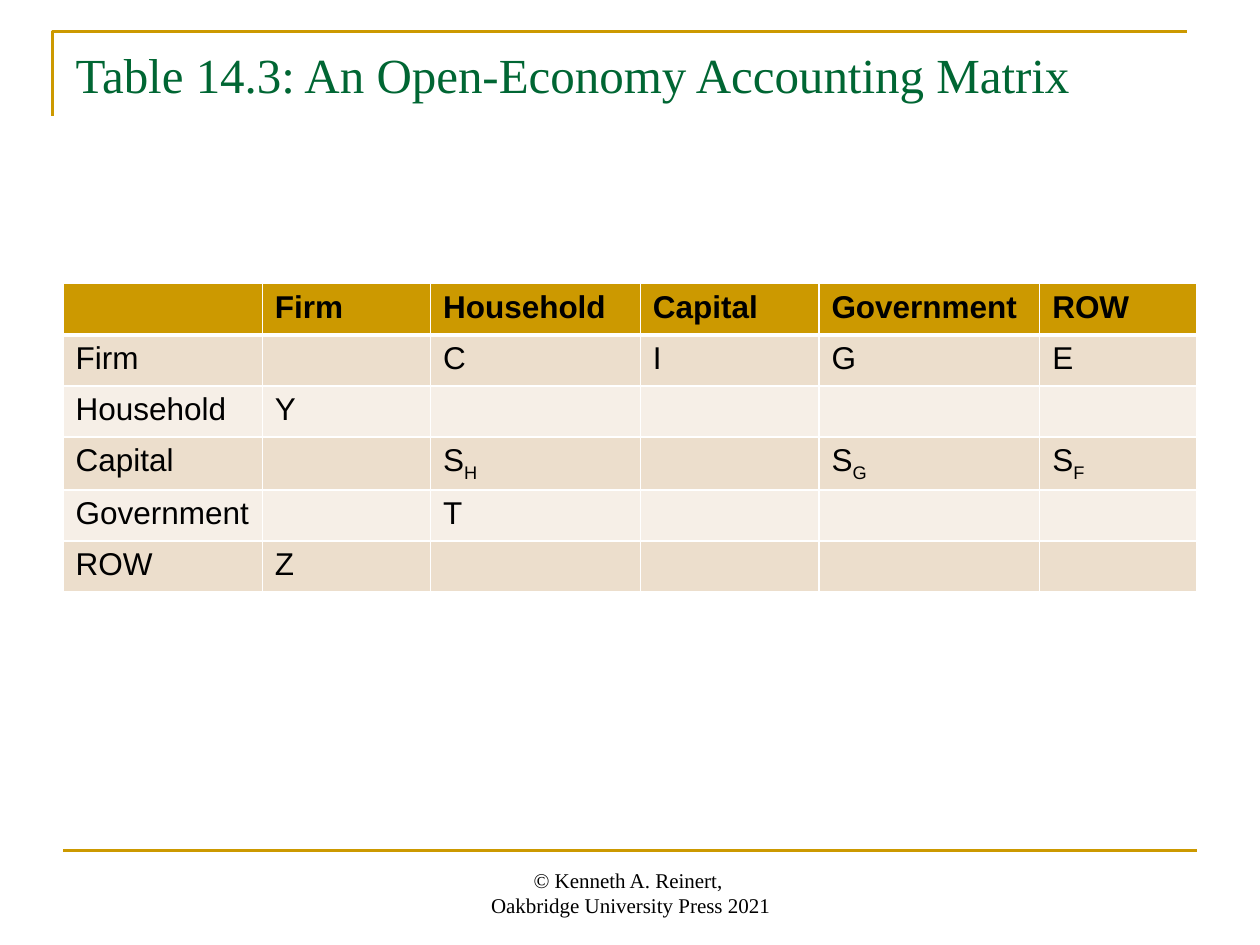
from dataclasses import dataclass

from lxml import etree
from pptx import Presentation
from pptx.dml.color import RGBColor
from pptx.enum.shapes import MSO_CONNECTOR
from pptx.enum.text import MSO_ANCHOR, MSO_AUTO_SIZE, PP_ALIGN
from pptx.oxml.ns import qn
from pptx.util import Cm, Pt

STRAIGHT = MSO_CONNECTOR.STRAIGHT
TOP, BOTTOM = MSO_ANCHOR.TOP, MSO_ANCHOR.BOTTOM
LEFT, CENTER = PP_ALIGN.LEFT, PP_ALIGN.CENTER


@dataclass(frozen=True)
class Theme:
    gold: RGBColor = RGBColor(0xCC, 0x99, 0x00)
    green: RGBColor = RGBColor(0x00, 0x66, 0x33)
    black: RGBColor = RGBColor(0, 0, 0)
    bands: tuple = (RGBColor(0xF6, 0xEF, 0xE7), RGBColor(0xEC, 0xDE, 0xCC))
    grid: str = "FFFFFF"
    serif: str = "Times New Roman"
    sans: str = "Arial"
    title_size: Pt = Pt(28)
    cell_size: Pt = Pt(18)
    footer_size: Pt = Pt(12)
    rule_width: Pt = Pt(1.5)


THEME = Theme()


def set_font(font, name, size, color):
    font.name, font.size = name, size
    font.color.rgb = color


def set_borders(cell, bottom):
    """Draw the grid around a cell, 1 pt wide except for the bottom edge."""
    properties = cell._tc.get_or_add_tcPr()
    for side, width in (("L", 1), ("R", 1), ("T", 1), ("B", bottom)):
        edge = etree.SubElement(properties, qn(f"a:ln{side}"), w=str(Pt(width)))
        fill = etree.SubElement(edge, qn("a:solidFill"))
        etree.SubElement(fill, qn("a:srgbClr"), val=THEME.grid)


prs = Presentation()
prs.slide_width, prs.slide_height = Cm(25.4), Cm(19.05)
slide = prs.slides.add_slide(prs.slide_layouts[5])

# Corner rule around the title and rule above the footer
outline = slide.shapes.build_freeform(Cm(1.06), Cm(2.33))
outline.add_line_segments(
    [(Cm(1.06), Cm(0.63)), (Cm(23.92), Cm(0.63))], close=False)
corner_rule = outline.convert_to_shape()
corner_rule.shadow.inherit = False
corner_rule.fill.background()

footer_rule = slide.shapes.add_connector(
    STRAIGHT, Cm(1.27), Cm(17.15), Cm(24.13), Cm(17.15))
etree.SubElement(footer_rule._element.spPr, qn("a:effectLst"))

for rule in (corner_rule, footer_rule):
    rule.line.color.rgb = THEME.gold
    rule.line.width = THEME.rule_width

# Title
title = slide.shapes.title
title.left, title.top = Cm(1.27), Cm(0.76)
title.width, title.height = Cm(22.86), Cm(3.18)
title.text_frame.text = "Table 14.3: An Open-Economy Accounting Matrix"
title.text_frame.auto_size = MSO_AUTO_SIZE.NONE
title.text_frame.vertical_anchor = TOP
heading = title.text_frame.paragraphs[0]
heading.alignment = LEFT
set_font(heading.font, THEME.serif, THEME.title_size, THEME.green)

# Accounting matrix; an underscore marks a subscript
accounts = ["Firm", "Household", "Capital", "Government", "ROW"]
flows = [
    ["", "C", "I", "G", "E"],
    ["Y", "", "", "", ""],
    ["", "S_H", "", "S_G", "S_F"],
    ["", "T", "", "", ""],
    ["Z", "", "", "", ""],
]
entries = [["", *accounts]]
entries += [[account, *row] for account, row in zip(accounts, flows)]
column_widths = [4.02, 3.39, 4.23, 3.6, 4.45, 3.17]
row_height = Cm(1.03)

matrix = slide.shapes.add_table(
    len(entries), len(column_widths), Cm(1.27), Cm(5.72),
    Cm(22.86), row_height * len(entries)).table
for column, width in zip(matrix.columns, column_widths):
    column.width = Cm(width)

for r, row in enumerate(entries):
    matrix.rows[r].height = row_height
    is_header = r == 0
    for c, entry in enumerate(row):
        cell = matrix.cell(r, c)
        set_borders(cell, bottom=3 if is_header else 1)
        cell.fill.solid()
        cell.fill.fore_color.rgb = THEME.gold if is_header else THEME.bands[r % 2]
        paragraph = cell.text_frame.paragraphs[0]
        paragraph.font.size = THEME.cell_size
        symbol, _, subscript = entry.partition("_")
        for part in filter(None, (symbol, subscript)):
            run = paragraph.add_run()
            run.text = part
            set_font(run.font, THEME.sans, THEME.cell_size, THEME.black)
            run.font.bold = is_header
        if subscript:
            run._r.get_or_add_rPr().set("baseline", "-25000")

# Footer
footer = slide.shapes.add_textbox(
    Cm(8.69), Cm(17.35), Cm(8.05), Cm(1.27)).text_frame
footer.word_wrap = True
footer.vertical_anchor = BOTTOM
footer.text = "© Kenneth A. Reinert, \nOakbridge University Press 2021"
for credit in footer.paragraphs:
    credit.alignment = CENTER
    set_font(credit.font, THEME.serif, THEME.footer_size, THEME.black)

prs.save("out.pptx")
